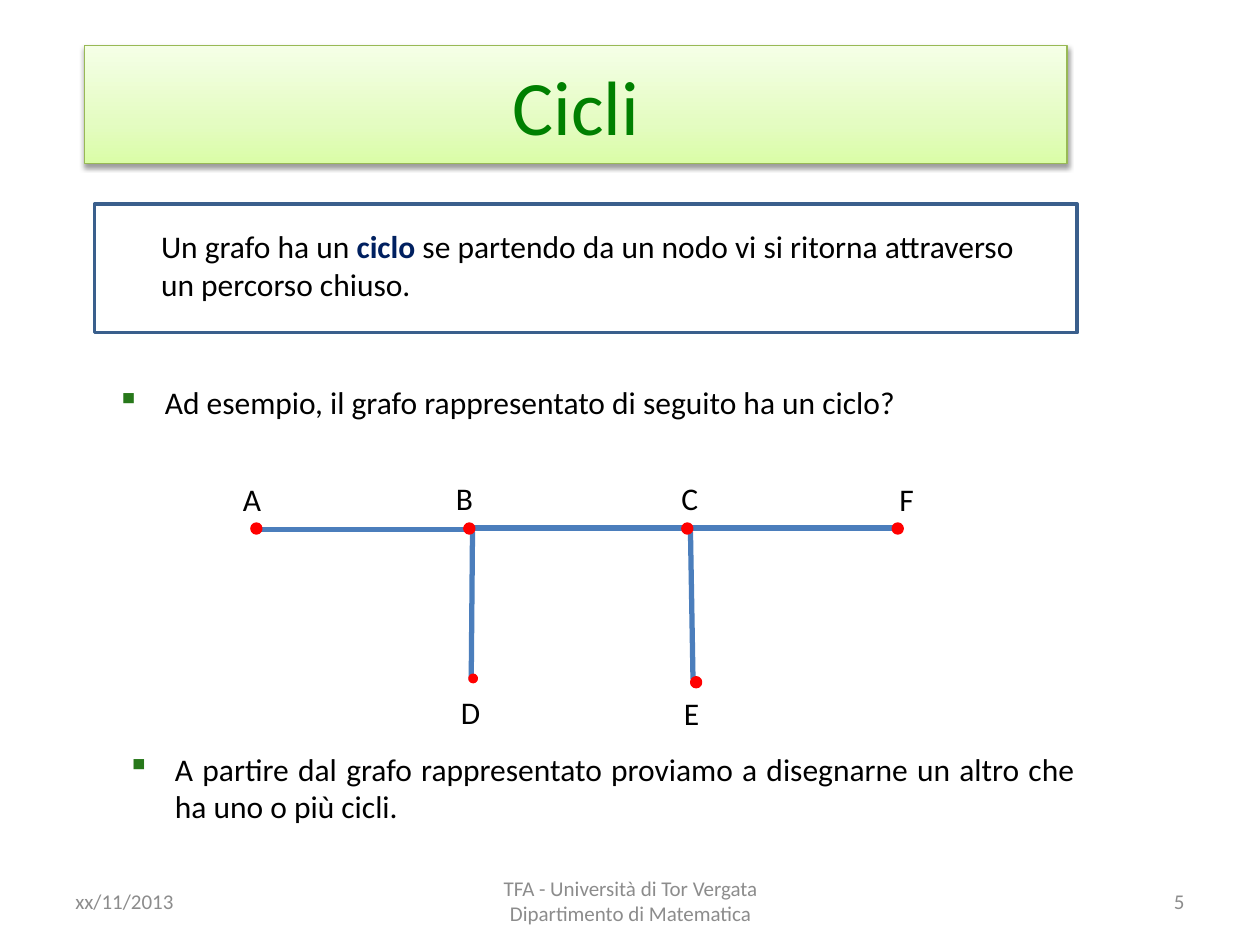
from lxml import etree
from copy import deepcopy
from pptx import Presentation
from pptx.dml.color import RGBColor
from pptx.enum.shapes import MSO_CONNECTOR, MSO_SHAPE
from pptx.enum.text import MSO_ANCHOR, MSO_AUTO_SIZE, PP_ALIGN
from pptx.oxml.ns import qn
from pptx.util import Inches, Pt

RECT, OVAL = MSO_SHAPE.RECTANGLE, MSO_SHAPE.OVAL
STRAIGHT = MSO_CONNECTOR.STRAIGHT
LEFT, CENTER, RIGHT, JUSTIFY = (
    PP_ALIGN.LEFT, PP_ALIGN.CENTER, PP_ALIGN.RIGHT, PP_ALIGN.JUSTIFY)
TOP, MIDDLE = MSO_ANCHOR.TOP, MSO_ANCHOR.MIDDLE
FIT_SHAPE = MSO_AUTO_SIZE.SHAPE_TO_FIT_TEXT

FONT = "Calibri"
COLORS = {
    "text": "000000", "title": "008000", "title_line": "98B955",
    "footer": "8C8C8C", "keyword": "002060", "frame": "3A5F8C",
    "edge": "4B7EBC", "node": "FF0000", "bullet": "27781A",
}
TITLE_GRADIENT = [(0, "DAFDA7"), (0.35, "E4FCC2"), (1, "F5FFE7")]


def rgb(name):
    return RGBColor.from_string(COLORS[name])


class GraphSlide:
    """Holds the current slide and its drawing style."""

    def __init__(self, slide):
        self.slide = slide
        self.shapes = slide.shapes

    def style(self, paragraph, size, color, align):
        paragraph.alignment = align
        for run in paragraph.runs:
            run.font.name, run.font.size = FONT, Pt(size)
            run.font.color.rgb = rgb(color)

    def shape(self, kind, box, line, width):
        shape = self.shapes.add_shape(kind, *map(Inches, box))
        shape.shadow.inherit = False
        shape.fill.background()
        shape.line.color.rgb = rgb(line)
        shape.line.width = Pt(width)
        return shape

    def title(self, text, box):
        banner = self.shape(RECT, box, "title_line", 0.75)
        banner.fill.gradient()
        banner.fill.gradient_angle = 90
        properties = banner._element.spPr
        stops = properties.find(".//" + qn("a:gsLst"))
        stops.append(deepcopy(stops[0]))
        for stop, (position, color) in zip(banner.fill.gradient_stops, TITLE_GRADIENT):
            stop.position = position
            stop.color.rgb = RGBColor.from_string(color)
        # Soft shadow below the banner
        shadow = etree.SubElement(
            properties.find(qn("a:effectLst")), qn("a:outerShdw"),
            blurRad=str(Pt(3.1)), dist=str(Pt(1.6)), dir="5400000", rotWithShape="0")
        black = etree.SubElement(shadow, qn("a:srgbClr"), val="000000")
        etree.SubElement(black, qn("a:alpha"), val="38000")
        banner.text_frame.text = text
        banner.text_frame.vertical_anchor = MIDDLE
        self.style(banner.text_frame.paragraphs[0], 44, "title", CENTER)

    def text(self, text, box, size=18, color="text", align=LEFT, anchor=TOP):
        textbox = self.shapes.add_textbox(*map(Inches, box))
        frame = textbox.text_frame
        frame.word_wrap = True
        frame.vertical_anchor = anchor
        frame.text = text
        self.style(frame.paragraphs[0], size, color, align)
        return frame

    def label(self, text, left, top):
        self.text(text, (left, top, 0.34, 0.4)).auto_size = FIT_SHAPE

    def bullet(self, text, box):
        paragraph = self.text(text, box, align=JUSTIFY).paragraphs[0]
        properties = paragraph._p.get_or_add_pPr()
        properties.set("marL", str(Inches(0.38)))
        properties.set("indent", str(Inches(-0.38)))
        color = etree.SubElement(properties, qn("a:buClr"))
        etree.SubElement(color, qn("a:srgbClr"), val=COLORS["bullet"])
        etree.SubElement(properties, qn("a:buChar"), char="▪")

    def definition(self, parts, text_box, frame_box):
        paragraph = self.text("", text_box).paragraphs[0]
        for part in parts:
            paragraph.add_run().text = part
        self.style(paragraph, 18, "text", LEFT)
        keyword = paragraph.runs[1].font
        keyword.bold = True
        keyword.color.rgb = rgb("keyword")
        self.shape(RECT, frame_box, "frame", 2)

    def edge(self, *ends):
        edge = self.shapes.add_connector(STRAIGHT, *map(Inches, ends))
        edge.line.color.rgb = rgb("edge")
        edge.line.width = Pt(3)
        etree.SubElement(edge._element.spPr, qn("a:effectLst"))

    def node(self, left, top, size=0.07):
        dot = self.shape(OVAL, (left, top, size, size), "node", 2)
        dot.fill.solid()
        dot.fill.fore_color.rgb = rgb("node")


def main():
    prs = Presentation()
    prs.slide_width, prs.slide_height = Inches(10), Inches(7.5)
    page = GraphSlide(prs.slides.add_slide(prs.slide_layouts[6]))

    # Title and definition
    page.title("Cicli", (0.67, 0.36, 7.8, 0.94))
    page.definition(
        ["Un grafo ha un ", "ciclo",
         " se partendo da un nodo vi si ritorna attraverso un percorso chiuso."],
        (1.18, 1.75, 7, 0.79), (0.75, 1.62, 7.8, 1.02))

    # Question and exercise
    page.bullet("Ad esempio, il grafo rappresentato di seguito ha un ciclo?",
                (0.83, 2.99, 7.72, 0.52))
    page.bullet("A partire dal grafo rappresentato proviamo a disegnarne un altro "
                "che ha uno o più cicli.", (0.91, 5.9, 7.72, 0.52))

    # Graph: edges A-B, B-C, C-F, B-D, C-E
    for ends in [(2.06, 4.2, 3.72, 4.2), (3.76, 4.19, 5.42, 4.19),
                 (5.49, 4.19, 7.09, 4.19), (3.75, 4.22, 3.74, 5.4),
                 (5.48, 4.22, 5.5, 5.39)]:
        page.edge(*ends)

    # Graph: nodes, upper row then lower row
    for left in (2, 3.69, 5.42, 7.09):
        page.node(left, 4.16)
    page.node(3.73, 5.36, 0.05)
    page.node(5.49, 5.38)
    for name, left, top in [("A", 1.83, 3.76), ("B", 3.52, 3.75), ("C", 5.31, 3.75),
                            ("F", 7.04, 3.76), ("D", 3.56, 5.45), ("E", 5.33, 5.46)]:
        page.label(name, left, top)

    # Footer
    for text, left, width, align in [
            ("xx/11/2013", 0.5, 2.33, LEFT),
            ("TFA - Università di Tor Vergata\vDipartimento di Matematica",
             3.42, 3.17, CENTER),
            ("5", 7.17, 2.33, RIGHT)]:
        page.text(text, (left, 6.95, width, 0.4), 12, "footer", align, MIDDLE)

    prs.save("out.pptx")


if __name__ == "__main__":
    main()
